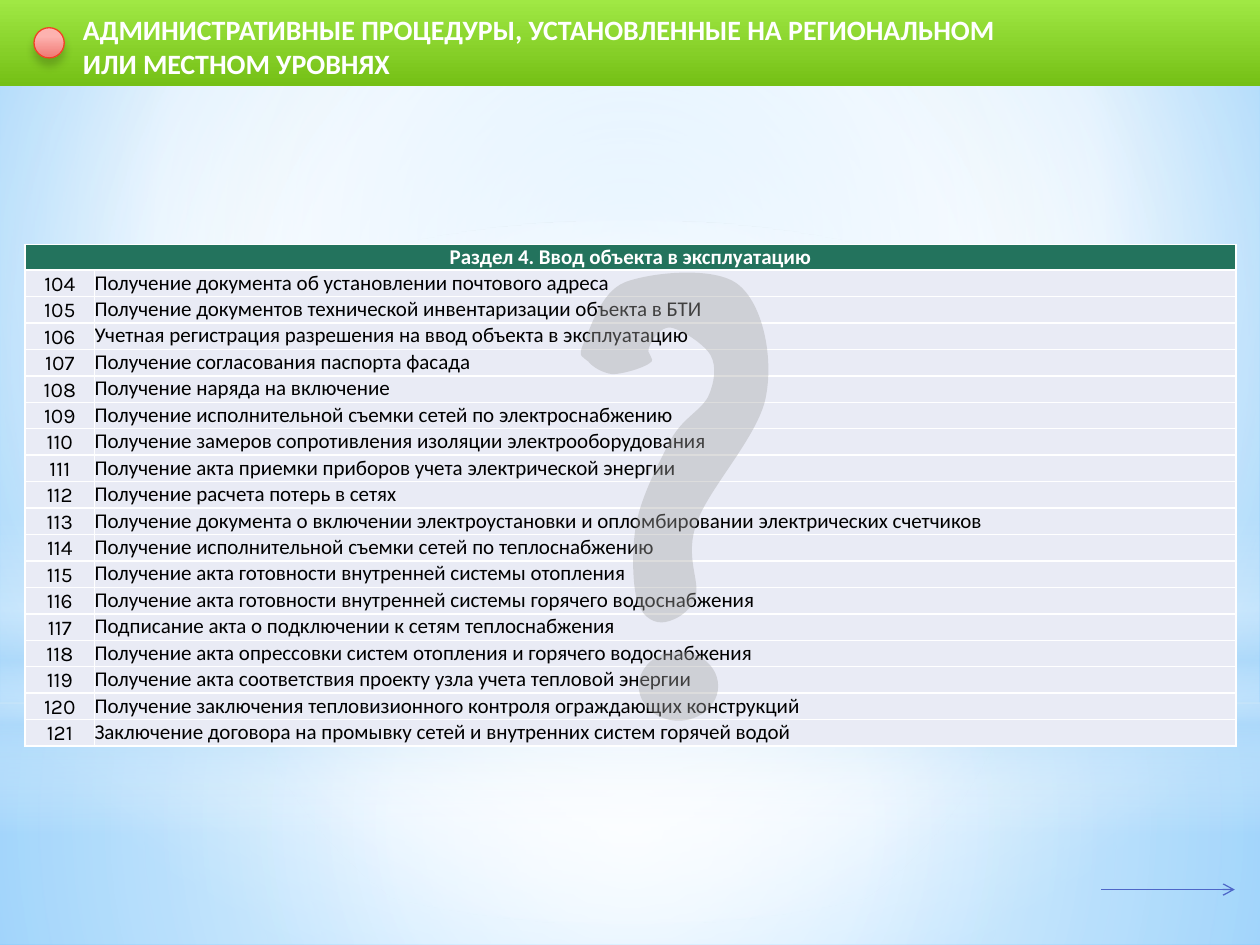
from lxml.etree import SubElement
from pptx import Presentation
from pptx.dml.color import RGBColor
from pptx.enum.shapes import MSO_CONNECTOR, MSO_SHAPE
from pptx.enum.text import MSO_ANCHOR, MSO_AUTO_SIZE, PP_ALIGN
from pptx.oxml.ns import qn
from pptx.util import Inches, Pt

TITLE = "АДМИНИСТРАТИВНЫЕ ПРОЦЕДУРЫ, УСТАНОВЛЕННЫЕ НА РЕГИОНАЛЬНОМ ИЛИ МЕСТНОМ УРОВНЯХ"
SECTION = "Раздел 4. Ввод объекта в эксплуатацию"
FIRST_NUMBER = 104
PROCEDURES = [
    "Получение документа об установлении почтового адреса",
    "Получение документов технической инвентаризации объекта в БТИ",
    "Учетная регистрация разрешения на ввод объекта в эксплуатацию",
    "Получение согласования паспорта фасада",
    "Получение наряда на включение",
    "Получение исполнительной съемки сетей по электроснабжению",
    "Получение замеров сопротивления изоляции электрооборудования",
    "Получение акта приемки приборов учета электрической энергии",
    "Получение расчета потерь в сетях",
    "Получение документа о включении электроустановки и опломбировании электрических счетчиков",
    "Получение исполнительной съемки сетей по теплоснабжению",
    "Получение акта готовности внутренней системы отопления",
    "Получение акта готовности внутренней системы горячего водоснабжения",
    "Подписание акта о подключении к сетям теплоснабжения",
    "Получение акта опрессовки систем отопления и горячего водоснабжения",
    "Получение акта соответствия проекту узла учета тепловой энергии",
    "Получение заключения тепловизионного контроля ограждающих конструкций",
    "Заключение договора на промывку сетей и внутренних систем горячей водой",
]

# Gradient stops: position %, colour, opacity %
CENTRE = (50, 50, 50, 50)
SKY = [(0, "9ED5FF", 100), (60, "FFFFFF", 100), (100, "5BB9FF", 100)]
GLOWS = [
    (MSO_SHAPE.RECTANGLE, (0, 5.58, 10, 1.92),
     [(0, "FFFFFF", 91), (37, "FFFFFF", 76), (100, "B4DCFA", 79)], CENTRE),
    (MSO_SHAPE.RECTANGLE, (0, 0, 10, 5.58),
     [(0, "FFFFFF", 89), (48, "FFFFFF", 62), (100, "B4DCFA", 79)], CENTRE),
    (MSO_SHAPE.RECTANGLE, (0, 4.12, 10, 2.5),
     [(0, "FFFFFF", 0), (29, "FFFFFF", 30), (45, "B4DCFA", 40),
      (55, "FFFFFF", 26), (65, "B4DCFA", 60), (100, "FFFFFF", 0)], None),
    (MSO_SHAPE.OVAL, (0, 1.75, 10, 5.58), [(0, "FFFFFF", 100), (56, "FFFFFF", 0)], CENTRE),
]
BANNER = [(0, "A0E844", 100), (100, "75C016", 100)]
BULLET = [(28, "FDB2AF", 100), (100, "F07873", 100)]

# Question mark: start point, then Bezier curves (two controls and an end)
HOOK_BOX = (4.61, 2.16, 1.49, 2.78)
HOOK_START = (4.63, 2.73)
HOOK_CURVES = [
    (4.68, 2.63, 4.76, 2.32, 4.96, 2.24), (5.17, 2.16, 5.68, 2.11, 5.86, 2.26),
    (6.05, 2.41, 6.14, 2.82, 6.08, 3.14), (6.03, 3.45, 5.62, 3.88, 5.53, 4.15),
    (5.43, 4.42, 5.56, 4.61, 5.52, 4.74), (5.47, 4.88, 5.32, 4.94, 5.25, 4.94),
    (5.17, 4.94, 5.08, 4.88, 5.05, 4.74), (5.02, 4.61, 5.01, 4.32, 5.06, 4.11),
    (5.11, 3.9, 5.24, 3.65, 5.33, 3.48), (5.42, 3.32, 5.56, 3.26, 5.62, 3.15),
    (5.67, 3.04, 5.69, 2.91, 5.64, 2.82), (5.59, 2.73, 5.4, 2.61, 5.32, 2.6),
    (5.24, 2.59, 5.17, 2.71, 5.15, 2.76), (5.12, 2.8, 5.21, 2.85, 5.16, 2.88),
    (5.11, 2.92, 4.94, 2.97, 4.86, 2.97), (4.78, 2.96, 4.7, 2.91, 4.67, 2.87),
    (4.63, 2.83, 4.58, 2.84, 4.63, 2.73),
]
DOT_BOX = (5.07, 5.17, 0.63, 0.55)

HEADING_FONT = dict(name="Calibri", size=Pt(12), bold=True)
NUMBER_FONT = dict(name="Karla", size=Pt(12), bold=False)
PROCEDURE_FONT = dict(name="Calibri", size=Pt(12), bold=False)
TITLE_FONT = dict(name="Calibri", size=Pt(16), bold=True)
FLUSH = dict(margin_left=0, margin_right=0, margin_top=0, margin_bottom=0)
NUMBER_CELL = dict(margin_left=Inches(0.01), margin_right=Inches(0.01),
                   margin_top=Inches(0.01), margin_bottom=0,
                   vertical_anchor=MSO_ANCHOR.BOTTOM)


def rgb(color):
    return RGBColor.from_string(color)


def node(parent, tag, **attributes):
    return SubElement(parent, qn(tag), {key: str(value) for key, value in attributes.items()})


def add_color(parent, color, opacity=100):
    node(node(parent, "a:srgbClr", val=color), "a:alpha", val=opacity * 1000)


def set_gradient(holder, fill, stops, focus=None):
    """Radial around focus (left, top, right, bottom in %), or top to bottom without it."""
    fill.gradient()
    gradient = holder.find(qn("a:gradFill"))
    for child in list(gradient):
        gradient.remove(child)
    stop_list = node(gradient, "a:gsLst")
    for position, color, opacity in stops:
        add_color(node(stop_list, "a:gs", pos=position * 1000), color, opacity)
    if focus:
        circle = node(gradient, "a:path", path="circle")
        node(circle, "a:fillToRect", **{side: part * 1000 for side, part in zip("ltrb", focus)})
    else:
        node(gradient, "a:lin", ang=90 * 60000, scaled=0)


def set_all(target, values):
    for key, value in values.items():
        setattr(target, key, value)


def add_plain(shapes, kind, box):
    shape = shapes.add_shape(kind, *map(Inches, box))
    shape.shadow.inherit = False
    shape.line.fill.background()
    return shape


def write(frame, words, font, color, align=PP_ALIGN.LEFT):
    paragraph = frame.paragraphs[0]
    paragraph.alignment = align
    run = paragraph.add_run()
    run.text = words
    set_all(run.font, font)
    run.font.color.rgb = rgb(color)


def fill_cell(cell, words, font, color, fill, layout, align=PP_ALIGN.LEFT):
    write(cell.text_frame, words, font, color, align)
    set_all(cell, layout)
    properties = cell._tc.get_or_add_tcPr()
    for side in ("a:lnL", "a:lnR", "a:lnT", "a:lnB"):
        add_color(node(node(properties, side, w=Pt(1)), "a:solidFill"), "FFFFFF")
    cell.fill.solid()
    cell.fill.fore_color.rgb = rgb(fill)


def add_glows(slide):
    """Put the light effects on the slide master, behind its placeholders."""
    master_tree = slide.slide_layout.slide_master.shapes._spTree
    for order, (kind, box, stops, focus) in enumerate(GLOWS):
        glow = add_plain(slide.shapes, kind, box)
        set_gradient(glow._element.spPr, glow.fill, stops, focus)
        glow._element.nvSpPr.cNvPr.id = 101 + order
        master_tree.insert(2 + order, glow._element)


def add_procedures(slide):
    rows = len(PROCEDURES) + 1
    frame = slide.shapes.add_table(rows, 2, *map(Inches, (0.2, 1.94, 9.61, 0.21 * rows)))
    table = frame.table
    set_all(table, dict(first_row=False, horz_banding=False))
    for column, width in zip(table.columns, (0.55, 9.06)):
        column.width = Inches(width)
    table.rows[0].height = Inches(0.2)
    heading = table.cell(0, 0)
    heading.merge(table.cell(0, 1))
    fill_cell(heading, SECTION, HEADING_FONT, "FFFFFF", "23735D", FLUSH, PP_ALIGN.CENTER)
    for row, procedure in enumerate(PROCEDURES, 1):
        number = str(FIRST_NUMBER + row - 1)
        fill_cell(table.cell(row, 0), number, NUMBER_FONT, "000000", "E9EBF5",
                  NUMBER_CELL, PP_ALIGN.CENTER)
        fill_cell(table.cell(row, 1), procedure, PROCEDURE_FONT, "000000", "E9EBF5", FLUSH)


def add_hook(shapes):
    left, top, width, height = map(Inches, HOOK_BOX)
    builder = shapes.build_freeform(*map(Inches, HOOK_START))
    builder.add_line_segments([tuple(map(Inches, curve[4:])) for curve in HOOK_CURVES])
    hook = builder.convert_to_shape()
    set_all(hook, dict(left=left, top=top, width=width, height=height))
    outline = hook._element.find(".//" + qn("a:path"))
    for child in list(outline):
        outline.remove(child)
    outline.set("w", str(width))
    outline.set("h", str(height))
    for tag, numbers in [("a:moveTo", HOOK_START)] + [("a:cubicBezTo", c) for c in HOOK_CURVES]:
        segment = node(outline, tag)
        for x, y in zip(numbers[::2], numbers[1::2]):
            node(segment, "a:pt", x=Inches(x) - left, y=Inches(y) - top)
    node(outline, "a:close")
    hook.shadow.inherit = False
    hook.line.fill.background()
    return hook


def add_question_mark(slide):
    mark = slide.shapes.add_group_shape()
    for part in (add_hook(mark.shapes), add_plain(mark.shapes, MSO_SHAPE.OVAL, DOT_BOX)):
        part.fill.solid()
        part.fill.fore_color.rgb = rgb("A6A6A6")
        node(part._element.spPr.find(qn("a:solidFill"))[0], "a:alpha", val=39000)
    box = [min(HOOK_BOX[0], DOT_BOX[0]), HOOK_BOX[1], HOOK_BOX[2], DOT_BOX[1] + DOT_BOX[3] - HOOK_BOX[1]]
    transform = mark._element.grpSpPr.find(qn("a:xfrm"))
    left, top, width, height = map(Inches, box)
    for place, extent in (("a:off", "a:ext"), ("a:chOff", "a:chExt")):
        for tag, values in ((place, dict(x=left, y=top)), (extent, dict(cx=width, cy=height))):
            for key, value in values.items():
                transform.find(qn(tag)).set(key, str(value))


def add_header(slide):
    banner = add_plain(slide.shapes, MSO_SHAPE.RECTANGLE, (0, 0, 10, 0.68))
    set_gradient(banner._element.spPr, banner.fill, BANNER)
    title = slide.shapes.add_textbox(*map(Inches, (0.56, 0.05, 7.74, 0.64)))
    set_all(title.text_frame, dict(word_wrap=True, auto_size=MSO_AUTO_SIZE.SHAPE_TO_FIT_TEXT))
    write(title.text_frame, TITLE, TITLE_FONT, "FFFFFF")
    bullet = add_plain(slide.shapes, MSO_SHAPE.OVAL, (0.27, 0.22, 0.24, 0.24))
    set_gradient(bullet._element.spPr, bullet.fill, BULLET)
    bullet.line.color.rgb = rgb("F14124")
    bullet.line.width = Pt(0.75)
    effects = bullet._element.spPr.find(qn("a:effectLst"))
    shadow = node(effects, "a:outerShdw", blurRad=Pt(5), dist=Pt(4), dir=90 * 60000)
    add_color(shadow, "000000", 20)


def add_next_arrow(slide):
    arrow = slide.shapes.add_connector(MSO_CONNECTOR.STRAIGHT, *map(Inches, (8.74, 7.06, 9.8, 7.06)))
    arrow.line.color.rgb = rgb("4E67C8")
    arrow.line.width = Pt(0.75)
    node(arrow.line._get_or_add_ln(), "a:tailEnd", type="arrow")
    node(arrow._element.spPr, "a:effectLst")


deck = Presentation()
deck.slide_width, deck.slide_height = Inches(10), Inches(7.5)
slide = deck.slides.add_slide(deck.slide_layouts[6])
sky = slide.background.fill
sky.solid()
set_gradient(slide.element.find(".//" + qn("p:bgPr")), sky, SKY, (20, 10, 20, 60))
for add_part in (add_glows, add_procedures, add_question_mark, add_header, add_next_arrow):
    add_part(slide)
deck.save("out.pptx")
